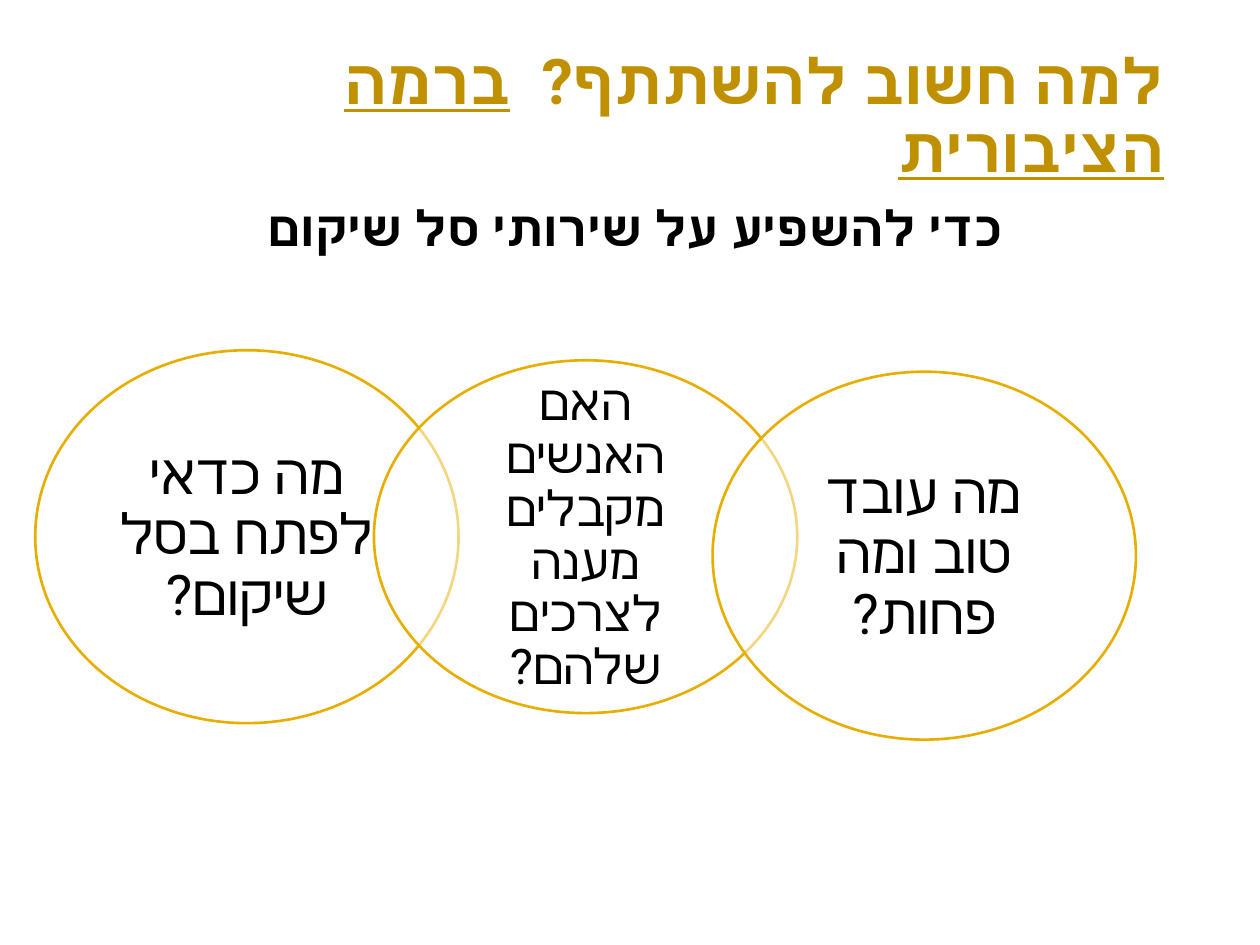
"""Build the slide on why taking part matters at the public level."""
from dataclasses import dataclass

from lxml import etree
from pptx import Presentation
from pptx.dml.color import RGBColor
from pptx.enum.shapes import MSO_SHAPE
from pptx.enum.text import MSO_ANCHOR, MSO_AUTO_SIZE, PP_ALIGN
from pptx.oxml.ns import qn
from pptx.util import Inches, Pt

OVAL = MSO_SHAPE.OVAL
MIDDLE = MSO_ANCHOR.MIDDLE
FIXED, GROW = MSO_AUTO_SIZE.NONE, MSO_AUTO_SIZE.SHAPE_TO_FIT_TEXT
RIGHT, CENTER = PP_ALIGN.RIGHT, PP_ALIGN.CENTER
GOLD = RGBColor(0xBF, 0x90, 0x00)
AMBER = RGBColor(0xE7, 0xAE, 0x00)
BLACK = RGBColor(0, 0, 0)
WHITE = RGBColor(0xFF, 0xFF, 0xFF)
FACE = "Roboto"
WIDE, HIGH = 10, 7.5
LEFT, SPAN, OVERLAP = 0.28, 3.36, 0.2


@dataclass
class Ring:
    """One circle: its words, middle line, height and text size."""

    words: str
    mid: float
    tall: float
    size: int


RINGS = [
    Ring("מה כדאי לפתח בסל שיקום?", 4.26, 2.96, 32),
    Ring("האם האנשים מקבלים מענה לצרכים שלהם?", 4.26, 2.8, 28),
    Ring("מה עובד טוב ומה פחות?", 4.41, 2.92, 32),
]


def style(para, size: int, color: RGBColor, align, bold: bool = False) -> None:
    """Set font, with its complex-script face, and alignment of a paragraph."""
    font = para.font
    font.name, font.size, font.bold = FACE, Pt(size), bold
    font.color.rgb = color
    para.alignment = align
    props = para._p.get_or_add_pPr().find(qn("a:defRPr"))
    etree.SubElement(props, qn("a:cs"), typeface=FACE)


def add_title(slide) -> None:
    """Fill the title placeholder, its second part underlined."""
    title = slide.shapes.title
    title.left, title.top = Inches(0.54), Inches(0.31)
    title.width, title.height = Inches(8.8), Inches(1.25)
    frame = title.text_frame
    frame.auto_size, frame.vertical_anchor = FIXED, MIDDLE
    para = frame.paragraphs[0]
    para.add_run().text = "למה חשוב להשתתף?  "
    level = para.add_run()
    level.text = "ברמה הציבורית"
    level.font.underline = True
    para.line_spacing = 0.9
    style(para, 36, GOLD, RIGHT, True)


def add_lead(slide) -> None:
    """Add the line below the title."""
    box = slide.shapes.add_textbox(
        Inches(1.2), Inches(1.52), Inches(7.68), Inches(0.57))
    frame = box.text_frame
    frame.word_wrap, frame.auto_size = True, GROW
    para = frame.paragraphs[0]
    para.text = "כדי להשפיע על שירותי סל שיקום"
    style(para, 28, BLACK, CENTER, True)


def add_ring(slide, col: int, ring: Ring) -> None:
    """Draw one half-clear circle with its question."""
    left = LEFT + col * SPAN * (1 - OVERLAP)
    oval = slide.shapes.add_shape(
        OVAL, Inches(left), Inches(ring.mid - ring.tall / 2),
        Inches(SPAN), Inches(ring.tall))
    oval.shadow.inherit = False
    oval.fill.solid()
    oval.fill.fore_color.rgb = WHITE
    tone = oval._element.spPr.find(qn("a:solidFill"))[0]
    etree.SubElement(tone, qn("a:alpha"), val="50000")
    oval.line.color.rgb, oval.line.width = AMBER, Pt(1.5)
    frame = oval.text_frame
    frame.word_wrap, frame.vertical_anchor = True, MIDDLE
    frame.margin_left = frame.margin_right = Inches(0.18)
    frame.margin_top = frame.margin_bottom = Inches(0.04)
    para = frame.paragraphs[0]
    para.text, para.line_spacing = ring.words, 0.9
    style(para, ring.size, BLACK, CENTER)
    para._p.get_or_add_pPr().set("rtl", "1")


def main() -> None:
    """Build and save the deck."""
    deck = Presentation()
    deck.slide_width, deck.slide_height = Inches(WIDE), Inches(HIGH)
    slide = deck.slides.add_slide(deck.slide_layouts.get_by_name("Title Only"))
    add_title(slide)
    add_lead(slide)
    for col, ring in enumerate(RINGS):
        add_ring(slide, col, ring)
    deck.save("out.pptx")


if __name__ == "__main__":
    main()
